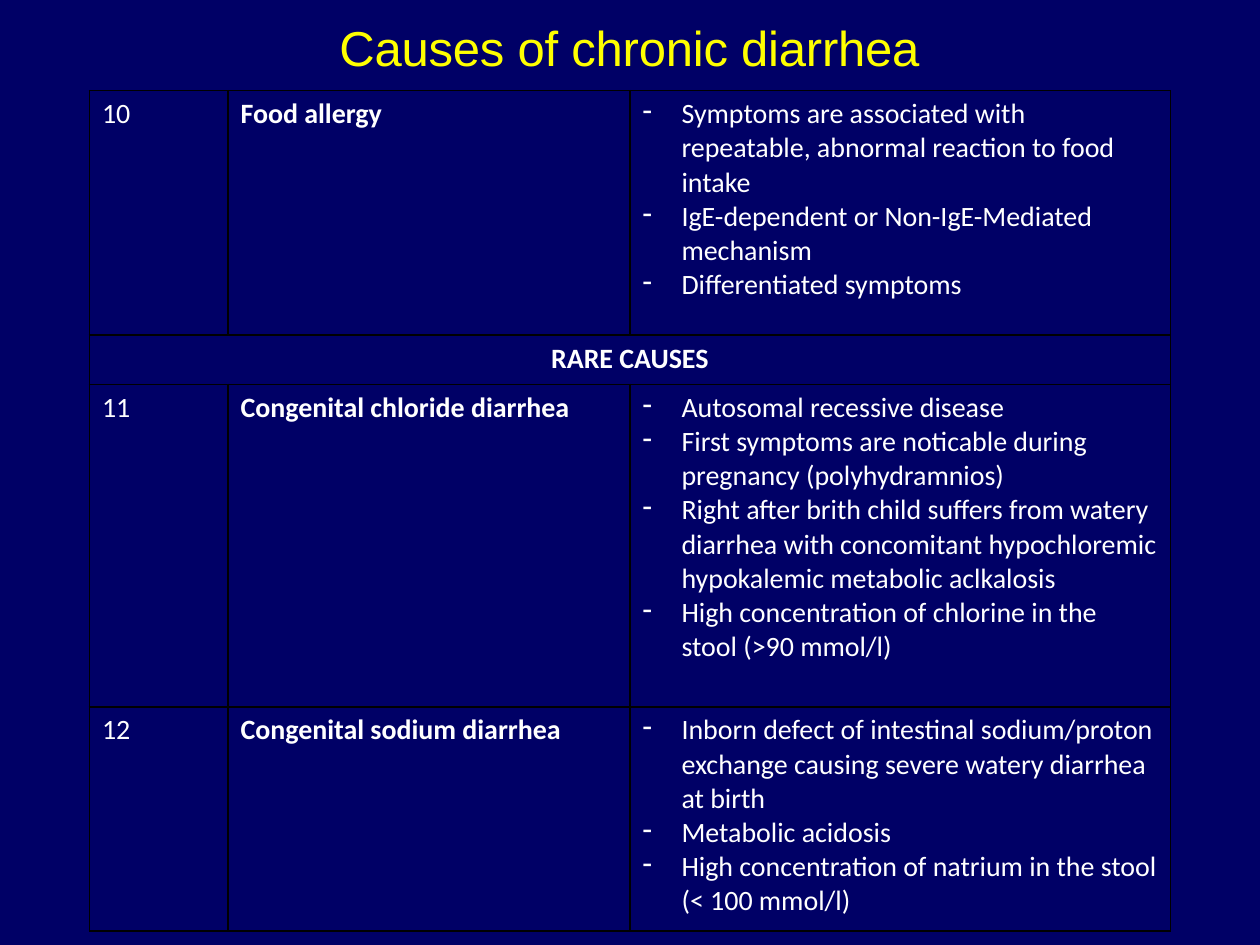
"""Build the slide listing causes of chronic diarrhea in a table."""
import pptx
import pptx.dml.color
import pptx.enum.text
import pptx.oxml
import pptx.oxml.ns
import pptx.util
from pptx.util import Inches

NAVY = pptx.dml.color.RGBColor(0x00, 0x00, 0x66)
YELLOW = pptx.dml.color.RGBColor(0xFF, 0xFF, 0x00)
WHITE = pptx.dml.color.RGBColor(0xFF, 0xFF, 0xFF)
BLACK = pptx.dml.color.RGBColor(0x00, 0x00, 0x00)

COLUMN_WIDTHS = [1.1, 3.19, 4.29]
ROW_HEIGHTS = [1.94, 0.39, 2.56, 1.78]
SECTION_ROW = 1
CAUSES = [
    ("10", "Food allergy", [
        "Symptoms are associated with repeatable, abnormal reaction to food intake",
        "IgE-dependent or Non-IgE-Mediated mechanism",
        "Differentiated symptoms",
    ]),
    ("RARE CAUSES", "", []),
    ("11", "Congenital chloride diarrhea", [
        "Autosomal recessive disease",
        "First symptoms are noticable during pregnancy (polyhydramnios)",
        "Right after brith child suffers from watery diarrhea with concomitant "
        "hypochloremic hypokalemic metabolic aclkalosis",
        "High concentration of chlorine in the stool (>90 mmol/l)",
    ]),
    ("12", "Congenital sodium diarrhea", [
        "Inborn defect of intestinal sodium/proton exchange causing severe "
        "watery diarrhea at birth",
        "Metabolic acidosis",
        "High concentration of natrium in the stool (< 100 mmol/l)",
    ]),
]


def format_font(font, color, **values):
    for name, value in values.items():
        setattr(font, name, value)
    font.color.rgb = color


def add_borders(cell):
    properties = cell._tc.get_or_add_tcPr()
    for position, side in enumerate(("lnL", "lnR", "lnT", "lnB")):
        properties.insert(position, pptx.oxml.parse_xml(
            f'<a:{side} {pptx.oxml.ns.nsdecls("a")} w="{pptx.util.Pt(1)}">'
            f'<a:solidFill><a:srgbClr val="{BLACK}"/></a:solidFill></a:{side}>'))


presentation = pptx.Presentation()
presentation.slide_width = Inches(10)
presentation.slide_height = Inches(7.5)
slide = presentation.slides.add_slide(presentation.slide_layouts[5])
slide.background.fill.solid()
slide.background.fill.fore_color.rgb = NAVY

title = slide.shapes.title
title_box = {"left": 1.77, "top": 0.14, "width": 6.45, "height": 0.47}
for name, value in title_box.items():
    setattr(title, name, Inches(value))
frame_format = {
    "margin_left": 0, "margin_top": 0, "margin_right": 0, "margin_bottom": 0,
    "vertical_anchor": pptx.enum.text.MSO_ANCHOR.TOP,
    "text": "Causes of chronic diarrhea",
}
for name, value in frame_format.items():
    setattr(title.text_frame, name, value)
title_paragraph = title.text_frame.paragraphs[0]
title_paragraph.alignment = pptx.enum.text.PP_ALIGN.CENTER
title_run = title_paragraph.runs[0]
format_font(title_run.font, YELLOW, name="Arial", size=pptx.util.Pt(28))
title_run.font._element.set("spc", "-10")

table = slide.shapes.add_table(
    len(ROW_HEIGHTS), len(COLUMN_WIDTHS), Inches(0.71), Inches(0.72),
    Inches(sum(COLUMN_WIDTHS)), Inches(sum(ROW_HEIGHTS))).table
table.first_row = False
table.horz_banding = False
for column, width in zip(table.columns, COLUMN_WIDTHS):
    column.width = Inches(width)
for row, height in zip(table.rows, ROW_HEIGHTS):
    row.height = Inches(height)
table.cell(SECTION_ROW, 0).merge(table.cell(SECTION_ROW, 2))

for row_index, (number, cause, features) in enumerate(CAUSES):
    is_section = row_index == SECTION_ROW
    for column_index, text in enumerate((number, cause, "\n".join(features))):
        cell = table.cell(row_index, column_index)
        cell.fill.background()
        add_borders(cell)
        if cell.is_spanned:
            continue
        cell.text = text
        for paragraph in cell.text_frame.paragraphs:
            if is_section:
                paragraph.alignment = pptx.enum.text.PP_ALIGN.CENTER
            if column_index == 2:
                properties = paragraph._p.get_or_add_pPr()
                properties.set("marL", str(Inches(0.31)))
                properties.set("indent", str(-Inches(0.31)))
                properties.append(pptx.oxml.parse_xml(
                    f'<a:buChar {pptx.oxml.ns.nsdecls("a")} char="-"/>'))
            for run in paragraph.runs:
                format_font(run.font, WHITE, name="Calibri", size=pptx.util.Pt(16),
                            bold=is_section or column_index == 1)

presentation.save("out.pptx")
